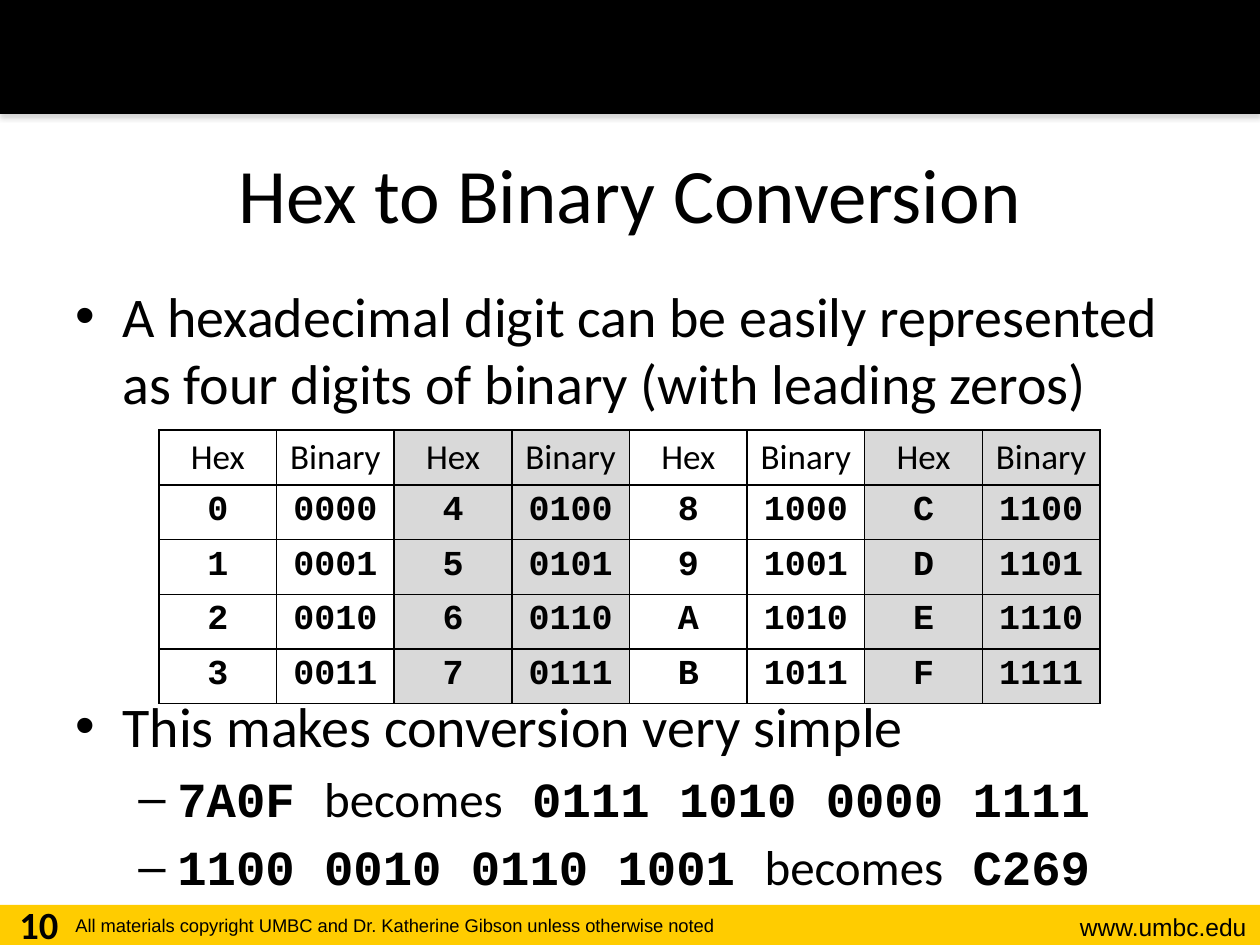
from lxml.etree import SubElement
from pptx import Presentation
from pptx.dml.color import RGBColor
from pptx.enum.shapes import MSO_SHAPE
from pptx.enum.text import MSO_ANCHOR, PP_ALIGN
from pptx.oxml.ns import qn
from pptx.util import Emu, Pt

SCALE = 914400 / 126
BLACK, WHITE, GRAY, GOLD = "000000", "FFFFFF", "D9D9D9", "FFCC00"
BODY, CODE, FOOTER = "Calibri", "Courier New", "Arial"
TABLE_WIDTH = 941
HEADER_ROW, DIGIT_ROW = 55, 52
LEVELS = [("•", 32, 47, -47), ("–", 28, 102, -39)]


def px(length):
    return Emu(round(length * SCALE))


def color(value):
    return RGBColor.from_string(value)


def add_run(paragraph, text, size, font=BODY, bold=False):
    run = paragraph.add_run()
    run.text = text
    run.font.size = Pt(size)
    run.font.name = font
    run.font.bold = bold
    run.font.color.rgb = color(BLACK)


def add_band(slide, top, height, fill):
    shape = slide.shapes.add_shape(MSO_SHAPE.RECTANGLE, 0, px(top), px(1260), px(height))
    shape.shadow.inherit = False
    shape.fill.solid()
    shape.fill.fore_color.rgb = color(fill)
    shape.line.fill.background()
    return shape


def add_drop_shadow(shape):
    effects = shape._element.spPr.find(qn("a:effectLst"))
    shadow = SubElement(effects, qn("a:outerShdw"), blurRad=str(Pt(3.1)),
                        dist=str(Pt(1.8)), dir="5400000", rotWithShape="0")
    tint = SubElement(shadow, qn("a:srgbClr"), val="808080")
    SubElement(tint, qn("a:alpha"), val="35000")


def add_frame(slide, left, top, width, height, anchor=MSO_ANCHOR.TOP):
    box = slide.shapes.add_textbox(px(left), px(top), px(width), px(height))
    frame = box.text_frame
    frame.word_wrap = True
    frame.vertical_anchor = anchor
    return frame


def add_label(slide, box, text, size, font=BODY, align=PP_ALIGN.LEFT,
              bold=False, anchor=MSO_ANCHOR.TOP):
    paragraph = add_frame(slide, *box, anchor).paragraphs[0]
    paragraph.alignment = align
    add_run(paragraph, text, size, font, bold)


def add_bullets(slide, box, items):
    frame = add_frame(slide, *box)
    for index, (level, runs) in enumerate(items):
        paragraph = frame.add_paragraph() if index else frame.paragraphs[0]
        mark, size, margin, indent = LEVELS[level]
        paragraph.level = level
        properties = paragraph._p.get_or_add_pPr()
        properties.set("marL", str(px(margin)))
        properties.set("indent", str(px(indent)))
        SubElement(properties, qn("a:buFont"), typeface=FOOTER)
        SubElement(properties, qn("a:buChar"), char=mark)
        if index:
            paragraph.space_before = Pt(size * 0.2)
        for text, font in runs:
            add_run(paragraph, text, size, font, font == CODE)


def set_borders(cell):
    properties = cell._tc.get_or_add_tcPr()
    for position, side in enumerate(("a:lnL", "a:lnR", "a:lnT", "a:lnB")):
        line = properties.makeelement(qn(side), {"w": str(Pt(1))})
        fill = SubElement(line, qn("a:solidFill"))
        SubElement(fill, qn("a:srgbClr"), val=BLACK)
        properties.insert(position, line)


def fill_cell(cell, text, font, fill):
    cell.fill.solid()
    cell.fill.fore_color.rgb = color(fill)
    set_borders(cell)
    paragraph = cell.text_frame.paragraphs[0]
    paragraph.alignment = PP_ALIGN.CENTER
    add_run(paragraph, text, 20, font, font == CODE)


def add_hex_table(slide):
    frame = slide.shapes.add_table(5, 8, px(159), px(430), px(TABLE_WIDTH),
                                   px(HEADER_ROW + 4 * DIGIT_ROW))
    table = frame.table
    table.first_row = False
    table.horz_banding = False
    for column in table.columns:
        column.width = px(TABLE_WIDTH / 8)
    for index, row in enumerate(table.rows):
        row.height = px(DIGIT_ROW if index else HEADER_ROW)
    for group in range(4):
        fill = GRAY if group % 2 else WHITE
        digits = [group * 4 + offset for offset in range(4)]
        pairs = [("Hex", "Binary")] + [(f"{digit:X}", f"{digit:04b}") for digit in digits]
        for row, pair in enumerate(pairs):
            for offset, text in enumerate(pair):
                cell = table.cell(row, group * 2 + offset)
                fill_cell(cell, text, CODE if row else BODY, fill)


def main():
    presentation = Presentation()
    presentation.slide_width, presentation.slide_height = px(1260), px(945)
    slide = presentation.slides.add_slide(presentation.slide_layouts[6])

    add_band(slide, 905, 40, GOLD)
    add_drop_shadow(add_band(slide, 0, 114, BLACK))
    add_label(slide, (1008, 906, 251, 43), "www.umbc.edu", 14, FOOTER, PP_ALIGN.RIGHT)
    add_label(slide, (63, 908, 827, 37),
              "All materials copyright UMBC and Dr. Katherine Gibson unless otherwise noted",
              10.5, FOOTER)
    add_label(slide, (63, 114, 1134, 158), "Hex to Binary Conversion", 44,
              align=PP_ALIGN.CENTER, anchor=MSO_ANCHOR.MIDDLE)
    add_bullets(slide, (63, 275, 1134, 150), [
        (0, [("A hexadecimal digit can be easily represented as four digits "
              "of binary (with leading zeros)", BODY)]),
    ])
    add_bullets(slide, (63, 685, 1134, 215), [
        (0, [("This makes conversion very simple", BODY)]),
        (1, [("7A0F ", CODE), ("becomes", BODY), (" 0111 1010 0000 1111", CODE)]),
        (1, [("1100 0010 0110 1001 ", CODE), ("becomes", BODY), (" C269", CODE)]),
    ])
    add_label(slide, (0, 895, 78, 50), "10", 22, align=PP_ALIGN.CENTER, bold=True)
    add_hex_table(slide)
    presentation.save("out.pptx")


if __name__ == "__main__":
    main()
